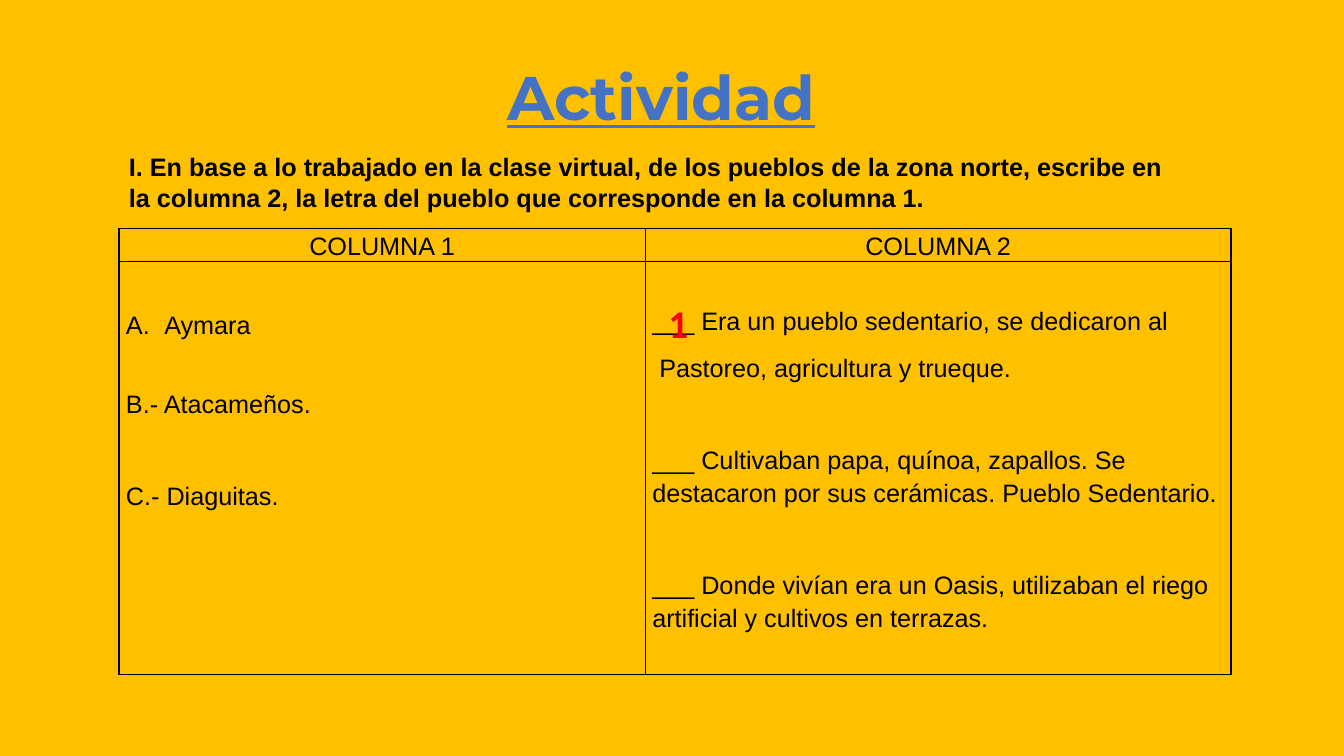
from dataclasses import dataclass

from lxml.etree import SubElement
from pptx import Presentation
from pptx.dml.color import RGBColor
from pptx.enum.text import MSO_ANCHOR, MSO_AUTO_SIZE, PP_ALIGN
from pptx.oxml.ns import qn
from pptx.util import Inches, Pt


@dataclass(frozen=True)
class Theme:
    background: str = "FFC000"
    title: str = "4472C4"
    text: str = "000000"
    answer: str = "FF0000"
    title_font: str = "Montserrat"
    body_font: str = "Arial"
    answer_font: str = "Calibri"
    title_size: int = 44
    body_size: int = 18
    answer_size: int = 28
    line_spacing: float = 1.15
    border: int = 1


@dataclass(frozen=True)
class Line:
    text: str
    before: int = 0
    indent: float = 0
    lettered: bool = False
    align: PP_ALIGN = PP_ALIGN.LEFT


class ActivitySlide:
    def __init__(self, presentation, theme):
        self.theme = theme
        self.slide = presentation.slides.add_slide(presentation.slide_layouts[5])
        fill = self.slide.background.fill
        fill.solid()
        fill.fore_color.rgb = RGBColor.from_string(theme.background)

    def style(self, paragraph, font_name, size, color, bold=False):
        font = paragraph.font
        font.name = font_name
        font.size = Pt(size)
        font.bold = bold
        font.color.rgb = RGBColor.from_string(color)

    def title(self, text, left, top, width, height):
        shape = self.slide.shapes.title
        shape.left, shape.top = Inches(left), Inches(top)
        shape.width, shape.height = Inches(width), Inches(height)
        frame = shape.text_frame
        frame.text = text
        frame.auto_size = MSO_AUTO_SIZE.NONE
        frame.vertical_anchor = MSO_ANCHOR.MIDDLE
        paragraph = frame.paragraphs[0]
        paragraph.alignment = PP_ALIGN.LEFT
        paragraph.line_spacing = 0.9
        theme = self.theme
        self.style(paragraph, theme.title_font, theme.title_size, theme.title, True)
        paragraph.font.underline = True

    def text(self, text, left, top, width, height, font_name, size, color,
             anchor=MSO_ANCHOR.TOP):
        box = self.slide.shapes.add_textbox(
            Inches(left), Inches(top), Inches(width), Inches(height))
        frame = box.text_frame
        frame.word_wrap = True
        frame.auto_size = MSO_AUTO_SIZE.SHAPE_TO_FIT_TEXT
        frame.vertical_anchor = anchor
        frame.text = text
        self.style(frame.paragraphs[0], font_name, size, color, True)

    def table(self, left, top, widths, heights, rows, top_margins):
        table = self.slide.shapes.add_table(
            len(heights), len(widths), Inches(left), Inches(top),
            Inches(sum(widths)), Inches(sum(heights))).table
        table.first_row = False
        table.horz_banding = False
        for column, width in zip(table.columns, widths):
            column.width = Inches(width)
        for row, height, contents, margins in zip(
                table.rows, heights, rows, top_margins):
            row.height = Inches(height)
            for cell, lines, margin in zip(row.cells, contents, margins):
                self.cell(cell, lines, margin)

    def cell(self, cell, lines, top_margin):
        cell.margin_left = cell.margin_right = Inches(0.07)
        cell.margin_top, cell.margin_bottom = Inches(top_margin), 0
        self.borders(cell)
        cell.fill.background()
        frame = cell.text_frame
        for index, line in enumerate(lines):
            paragraph = frame.add_paragraph() if index else frame.paragraphs[0]
            self.line(paragraph, line)

    def line(self, paragraph, line):
        paragraph.text = line.text
        paragraph.alignment = line.align
        paragraph.line_spacing = self.theme.line_spacing
        if line.before:
            paragraph.space_before = Pt(line.before)
        properties = paragraph._p.get_or_add_pPr()
        if line.indent:
            properties.set("marL", str(Inches(line.indent)))
        if line.lettered:
            properties.set("indent", str(-Inches(line.indent)))
            SubElement(properties, qn("a:buAutoNum"), type="alphaUcPeriod")
        theme = self.theme
        self.style(paragraph, theme.body_font, theme.body_size, theme.text)

    def borders(self, cell):
        properties = cell._tc.get_or_add_tcPr()
        for side in ("lnL", "lnR", "lnT", "lnB"):
            border = SubElement(
                properties, qn(f"a:{side}"), w=str(Pt(self.theme.border)))
            fill = SubElement(border, qn("a:solidFill"))
            SubElement(fill, qn("a:srgbClr"), val=self.theme.text)


def main():
    presentation = Presentation()
    presentation.slide_width = Inches(13.33)
    presentation.slide_height = Inches(7.5)
    theme = Theme()
    activity = ActivitySlide(presentation, theme)
    activity.title("Actividad", 4.93, 0.27, 4.5, 1.45)

    headings = [[Line(text, align=PP_ALIGN.CENTER)]
                for text in ("COLUMNA 1", "COLUMNA 2")]
    peoples = [
        Line("Aymara", indent=0.38, lettered=True),
        Line("B.- Atacameños.", before=33),
        Line("C.- Diaguitas.", before=43),
    ]
    descriptions = [
        Line("___ Era un pueblo sedentario, se dedicaron al"),
        Line("Pastoreo, agricultura y trueque.", before=10, indent=0.07),
        Line("___ Cultivaban papa, quínoa, zapallos. Se destacaron por sus "
             "cerámicas. Pueblo Sedentario.", before=43),
        Line("___ Donde vivían era un Oasis, utilizaban el riego artificial "
             "y cultivos en terrazas.", before=43),
    ]
    activity.table(1.18, 2.27, (5.22, 5.81), (0.32, 4.1),
                   (headings, (peoples, descriptions)),
                   ((0, 0), (0.46, 0.42)))

    activity.text(
        "I. En base a lo trabajado en la clase virtual, de los pueblos de la "
        "zona norte, escribe en la columna 2, la letra del pueblo que "
        "corresponde en la columna 1.",
        1.18, 1.45, 10.69, 0.71, theme.body_font, theme.body_size, theme.text,
        MSO_ANCHOR.MIDDLE)
    activity.text("1", 6.53, 2.92, 0.6, 0.57,
                  theme.answer_font, theme.answer_size, theme.answer)
    presentation.save("out.pptx")


if __name__ == "__main__":
    main()
